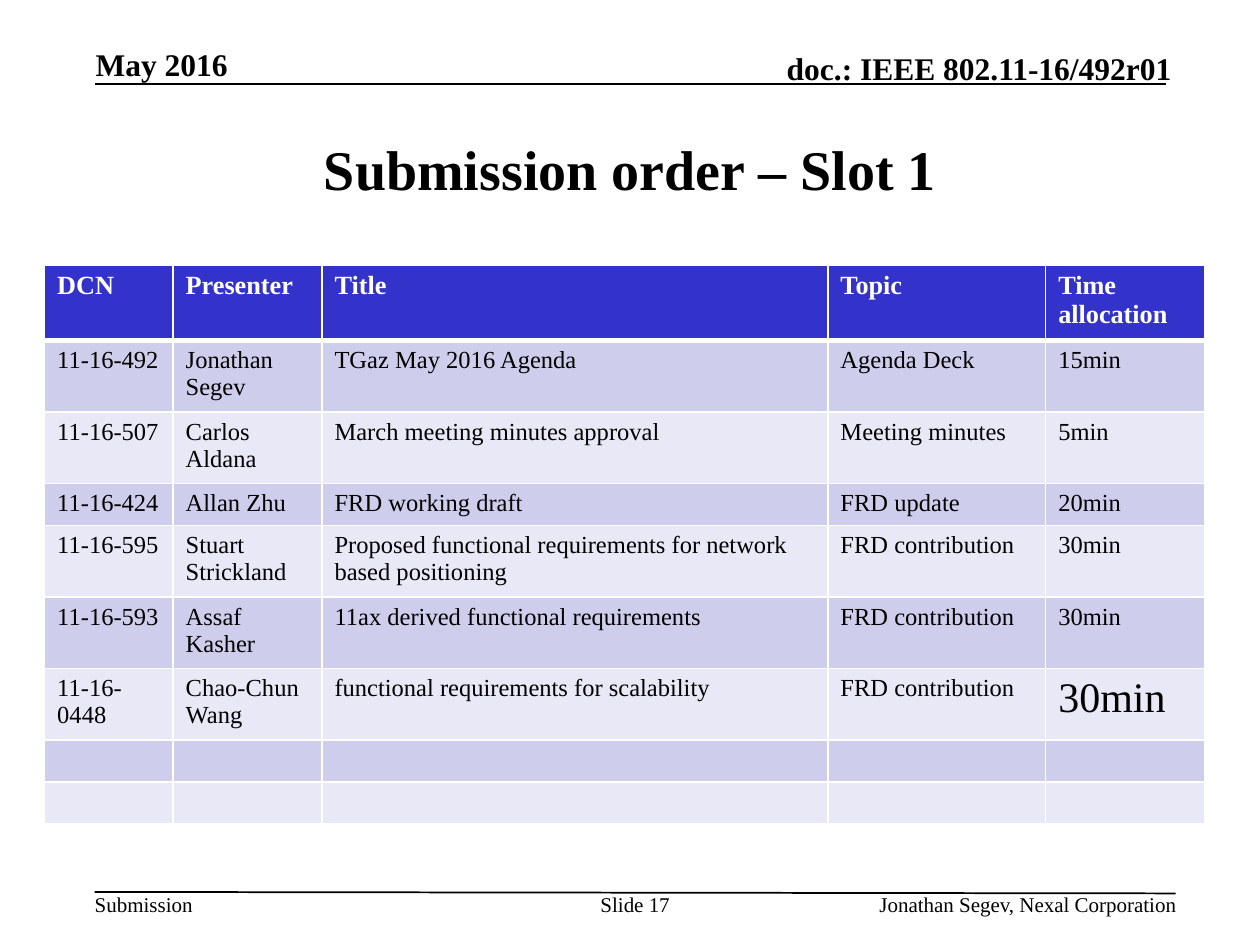
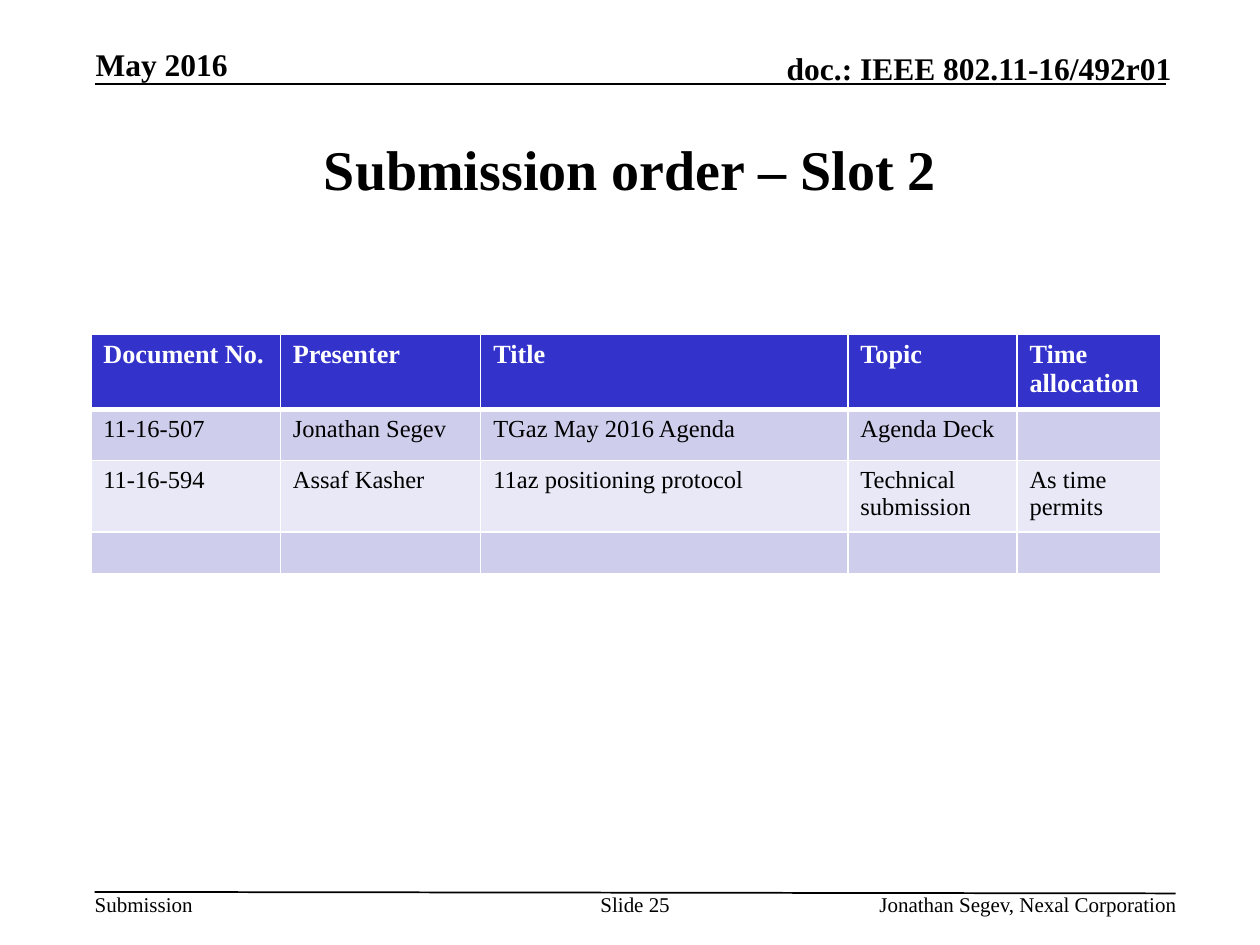
import pptx
import pptx.util
import pptx.dml.color
import pptx.enum.shapes
import pptx.enum.text
import pptx.oxml.ns
import lxml.etree

Cm = pptx.util.Cm
qn = pptx.oxml.ns.qn
ALIGN = pptx.enum.text.PP_ALIGN
ANCHOR = pptx.enum.text.MSO_ANCHOR

COLORS = {
    "text": "000000",
    "white": "FFFFFF",
    "header": "3333CC",
    "odd_row": "CECEEC",
    "even_row": "E8E8F6",
}
FONT = "Times New Roman"


def write(frame, text, size=14, bold=False, color="text", align=ALIGN.LEFT,
          anchor=ANCHOR.TOP):
    frame.vertical_anchor = anchor
    paragraph = frame.paragraphs[0]
    paragraph.alignment = align
    if not text:
        lxml.etree.SubElement(paragraph._p, qn("a:endParaRPr"), sz=str(size * 100))
        return
    run = paragraph.add_run()
    run.text = text
    run.font.name = FONT
    run.font.size = pptx.util.Pt(size)
    run.font.bold = bold
    run.font.color.rgb = pptx.dml.color.RGBColor.from_string(COLORS[color])


def add_border(cell, side, points):
    line = lxml.etree.SubElement(cell._tc.get_or_add_tcPr(), qn(f"a:ln{side}"),
                                 w=str(pptx.util.Pt(points)))
    fill = lxml.etree.SubElement(line, qn("a:solidFill"))
    lxml.etree.SubElement(fill, qn("a:srgbClr"), val=COLORS["white"])


HEADER_HEIGHT, TWO_LINES, ONE_LINE = 1.38, 1.35, 0.79

RULES = [
    (1.91, 1.7, 23.5, 1.7),
    (1.91, 17.98, 23.7, 18.01),
]

HEADING = {"size": 18, "bold": True, "anchor": ANCHOR.BOTTOM}
SMALL = {"size": 12}

slots = [
    {
        "title": "Submission order – Slot 1",
        "number": 17,
        "left": 0.9,
        "top": 5.34,
        "columns": [2.59, 3.0, 10.2, 4.39, 3.2],
        "heights": [HEADER_HEIGHT, TWO_LINES, TWO_LINES, ONE_LINE, TWO_LINES,
                    TWO_LINES, TWO_LINES, ONE_LINE, ONE_LINE],
        "rows": [
            ["DCN", "Presenter", "Title", "Topic", "Time allocation"],
            ["11-16-492", "Jonathan Segev", "TGaz May 2016 Agenda", "Agenda Deck", "15min"],
            ["11-16-507", "Carlos Aldana", "March meeting minutes approval",
             "Meeting minutes", "5min"],
            ["11-16-424", "Allan Zhu", "FRD working draft", "FRD update", "20min"],
            ["11-16-595", "Stuart Strickland",
             "Proposed functional requirements for network based positioning",
             "FRD contribution", "30min"],
            ["11-16-593", "Assaf Kasher", "11ax derived functional requirements",
             "FRD contribution", "30min"],
            ["11-16-0448", "Chao-Chun Wang", "functional requirements for scalability",
             "FRD contribution", "30min"],
            [""] * 5,
            [""] * 5,
        ],
        "large_cells": {(6, 4): 24},
    },
    {
        "title": "Submission order – Slot 2",
        "number": 25,
        "left": 1.83,
        "top": 6.73,
        "columns": [3.82, 4.04, 7.4, 3.41, 2.9],
        "heights": [HEADER_HEIGHT, 1.03, TWO_LINES, ONE_LINE],
        "rows": [
            ["Document No.", "Presenter", "Title", "Topic", "Time allocation"],
            ["11-16-507", "Jonathan Segev", "TGaz May 2016 Agenda", "Agenda Deck", ""],
            ["11-16-594", "Assaf Kasher", "11az positioning protocol",
             "Technical submission", "As time permits"],
            [""] * 5,
        ],
        "large_cells": {},
    },
]

presentation = pptx.Presentation()
presentation.slide_width = Cm(25.4)
presentation.slide_height = Cm(19.05)

for slot in slots:
    slide = presentation.slides.add_slide(presentation.slide_layouts[5])

    for x1, y1, x2, y2 in RULES:
        rule = slide.shapes.add_connector(pptx.enum.shapes.MSO_CONNECTOR.STRAIGHT,
                                          Cm(x1), Cm(y1), Cm(x2), Cm(y2))
        rule.line.width = pptx.util.Pt(1)
        rule.line.color.rgb = pptx.dml.color.RGBColor.from_string(COLORS["text"])
        lxml.etree.SubElement(rule._element.spPr, qn("a:effectLst"))

    title = slide.shapes.title
    title.left, title.top, title.width, title.height = Cm(1.91), Cm(1.91), Cm(21.59), Cm(2.95)
    write(title.text_frame, slot["title"], size=32, bold=True,
          align=ALIGN.CENTER, anchor=ANCHOR.MIDDLE)

    labels = [
        ("May 2016", 1.93, 0.91, 5.21, 0.76, HEADING),
        ("doc.: IEEE 802.11-16/492r01", 13.89, 0.99, 9.73, 0.76,
         {**HEADING, "align": ALIGN.RIGHT}),
        ("Submission", 1.91, 17.98, 1.98, 0.51, SMALL),
        (f"Slide {slot['number']}", 12.07, 17.98, 1.47, 1.02,
         {**SMALL, "align": ALIGN.CENTER}),
        ("Jonathan Segev, Nexal Corporation", 14.88, 17.98, 8.84, 0.51,
         {**SMALL, "align": ALIGN.RIGHT}),
    ]
    for text, left, top, width, height, style in labels:
        frame = slide.shapes.add_textbox(Cm(left), Cm(top), Cm(width), Cm(height)).text_frame
        frame.margin_left = frame.margin_right = frame.margin_top = frame.margin_bottom = 0
        frame.word_wrap = True
        write(frame, text, **style)

    table = slide.shapes.add_table(
        len(slot["rows"]), len(slot["columns"]), Cm(slot["left"]), Cm(slot["top"]),
        Cm(sum(slot["columns"])), Cm(sum(slot["heights"]))).table
    for column, width in zip(table.columns, slot["columns"]):
        column.width = Cm(width)
    for row, height in zip(table.rows, slot["heights"]):
        row.height = Cm(height)

    for row_index, texts in enumerate(slot["rows"]):
        is_header = row_index == 0
        fill = "header" if is_header else "odd_row" if row_index % 2 else "even_row"
        for column_index, text in enumerate(texts):
            cell = table.cell(row_index, column_index)
            for side in "LRTB":
                thick = (is_header and side == "B") or (row_index == 1 and side == "T")
                add_border(cell, side, 3 if thick else 1)
            cell.fill.solid()
            cell.fill.fore_color.rgb = pptx.dml.color.RGBColor.from_string(COLORS[fill])
            if is_header:
                write(cell.text_frame, text, size=15, bold=True, color="white")
            else:
                size = slot["large_cells"].get((row_index, column_index), 14)
                write(cell.text_frame, text, size=size)

presentation.save("out.pptx")
